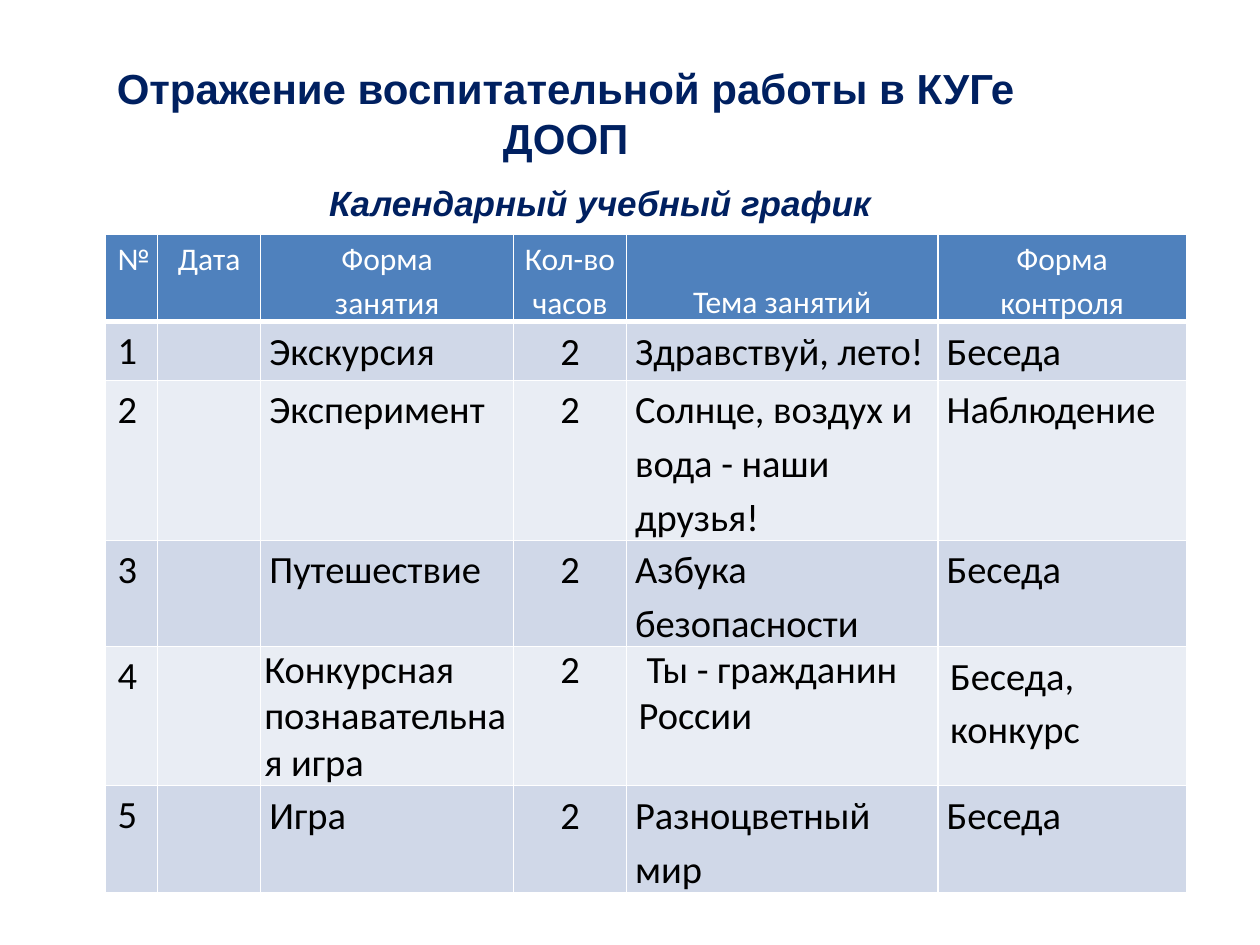
from dataclasses import dataclass, replace
from typing import Any

from lxml.etree import SubElement
from pptx import Presentation
from pptx.dml.color import RGBColor
from pptx.enum.text import MSO_ANCHOR, MSO_AUTO_SIZE, PP_ALIGN
from pptx.oxml.ns import qn
from pptx.util import Pt

NAVY = RGBColor(0x00, 0x20, 0x60)
BLUE = RGBColor(0x4F, 0x81, 0xBD)
BAND_DARK = RGBColor(0xD0, 0xD8, 0xE8)
BAND_LIGHT = RGBColor(0xE9, 0xED, 0xF4)
WHITE = RGBColor(0xFF, 0xFF, 0xFF)
BLACK = RGBColor(0x00, 0x00, 0x00)

HEADING_FONT = {"name": "Arial", "size": Pt(24), "bold": True}
SUBHEADING_FONT = {**HEADING_FONT, "size": Pt(20), "italic": True}
HEADER_FONT = {"name": "Calibri", "size": Pt(18), "bold": False}
BODY_FONT = {**HEADER_FONT, "size": Pt(22)}

COLUMN_WIDTHS = (30, 59, 144.5, 64.5, 178, 142)
ROW_HEIGHTS = (49.5, 33, 91.5, 60.5, 79.5, 61)


@dataclass(frozen=True)
class CellStyle:
    side: float = 5
    top: float = 0
    align: PP_ALIGN = PP_ALIGN.LEFT
    spacing: float = 1.15
    anchor: MSO_ANCHOR = MSO_ANCHOR.TOP
    left: float = 0
    first_line: float = 0


PLAIN = CellStyle()
CENTERED = CellStyle(align=PP_ALIGN.CENTER)
NUMBER = CellStyle(side=7.2, top=3.6, spacing=1)
DATE = replace(NUMBER, align=PP_ALIGN.CENTER)
BOTTOM = replace(CENTERED, anchor=MSO_ANCHOR.BOTTOM)
TIGHT = CellStyle(side=0, spacing=1)

HEADER_STYLES = (NUMBER, DATE, CENTERED, CENTERED, BOTTOM, CENTERED)
LESSON_STYLES = (NUMBER, DATE, PLAIN, CENTERED, PLAIN, PLAIN)
CONTEST_STYLES = (
    NUMBER,
    DATE,
    replace(TIGHT, left=2),
    replace(TIGHT, align=PP_ALIGN.CENTER),
    replace(TIGHT, left=7, first_line=4.5),
    replace(TIGHT, left=7, spacing=1.15, align=PP_ALIGN.JUSTIFY),
)

HEADERS = ("№", "Дата", "Форма\nзанятия", "Кол-во\nчасов", "Тема занятий", "Форма\nконтроля")
LESSONS = (
    ("Экскурсия", "Здравствуй, лето!", "Беседа"),
    ("Эксперимент", "Солнце, воздух и вода - наши друзья!", "Наблюдение"),
    ("Путешествие", "Азбука безопасности", "Беседа"),
    ("Конкурсная познавательная игра", "Ты - гражданин России", "Беседа, конкурс"),
    ("Игра", "Разноцветный мир", "Беседа"),
)
CONTEST_NUMBER = 4


def apply(target: Any, values: dict[str, Any]) -> None:
    for attribute, value in values.items():
        setattr(target, attribute, value)


def write(paragraph: Any, text: str, font: dict[str, Any], color: RGBColor) -> None:
    run = paragraph.add_run()
    run.text = text
    apply(run.font, font)
    run.font.color.rgb = color


def draw_heading(shape: Any, box: tuple, text: str, font: dict[str, Any],
                 auto_size: MSO_AUTO_SIZE) -> None:
    apply(shape, dict(zip(("left", "top", "width", "height"), map(Pt, box))))
    apply(shape.text_frame, {"word_wrap": True, "auto_size": auto_size,
                             "vertical_anchor": MSO_ANCHOR.TOP})
    paragraph = shape.text_frame.paragraphs[0]
    paragraph.alignment = PP_ALIGN.CENTER
    write(paragraph, text, font, NAVY)


def draw_borders(cell: Any, bottom: float) -> None:
    properties = cell._tc.get_or_add_tcPr()
    for edge, width in (("L", 1), ("R", 1), ("T", 1), ("B", bottom)):
        line = SubElement(properties, qn(f"a:ln{edge}"), w=str(Pt(width)))
        fill = SubElement(line, qn("a:solidFill"))
        SubElement(fill, qn("a:srgbClr"), val=str(WHITE))


def draw_cell(cell: Any, text: str, style: CellStyle, font: dict[str, Any],
              color: RGBColor, background: RGBColor, bottom: float) -> None:
    draw_borders(cell, bottom)
    cell.fill.solid()
    cell.fill.fore_color.rgb = background
    apply(cell, {"margin_left": Pt(style.side), "margin_right": Pt(style.side),
                 "margin_top": Pt(style.top), "margin_bottom": Pt(style.top),
                 "vertical_anchor": style.anchor})
    if not text:
        return
    for index, line in enumerate(text.split("\n")):
        frame = cell.text_frame
        paragraph = frame.add_paragraph() if index else frame.paragraphs[0]
        apply(paragraph, {"alignment": style.align, "line_spacing": style.spacing})
        apply_indent = paragraph._p.get_or_add_pPr().set
        apply_indent("marL", str(Pt(style.left)))
        apply_indent("indent", str(Pt(style.first_line)))
        write(paragraph, line, font, color)


def draw_schedule(slide: Any) -> None:
    schedule = slide.shapes.add_table(
        len(ROW_HEIGHTS), len(COLUMN_WIDTHS), Pt(60), Pt(134),
        Pt(sum(COLUMN_WIDTHS)), Pt(sum(ROW_HEIGHTS))).table
    apply(schedule, {"first_row": False, "horz_banding": False})
    for column, width in zip(schedule.columns, COLUMN_WIDTHS):
        column.width = Pt(width)
    for row, height in zip(schedule.rows, ROW_HEIGHTS):
        row.height = Pt(height)
    for column, (text, style) in enumerate(zip(HEADERS, HEADER_STYLES)):
        draw_cell(schedule.cell(0, column), text, style, HEADER_FONT, WHITE, BLUE, 3)
    for number, (activity, topic, control) in enumerate(LESSONS, 1):
        styles = CONTEST_STYLES if number == CONTEST_NUMBER else LESSON_STYLES
        background = BAND_DARK if number % 2 else BAND_LIGHT
        texts = (str(number), "", activity, "2", topic, control)
        for column, (text, style) in enumerate(zip(texts, styles)):
            draw_cell(schedule.cell(number, column), text, style,
                      BODY_FONT, BLACK, background, 1)


def main() -> None:
    presentation = Presentation()
    apply(presentation, {"slide_width": Pt(720), "slide_height": Pt(540)})
    slide = presentation.slides.add_slide(presentation.slide_layouts[5])
    draw_heading(slide.shapes.title, (54, 32, 538.5, 38),
                 "Отражение воспитательной работы в КУГе ДООП",
                 HEADING_FONT, MSO_AUTO_SIZE.NONE)
    subheading = slide.shapes.add_textbox(Pt(0), Pt(0), Pt(0), Pt(0))
    draw_heading(subheading, (122, 100, 442, 32), "Календарный учебный график",
                 SUBHEADING_FONT, MSO_AUTO_SIZE.SHAPE_TO_FIT_TEXT)
    draw_schedule(slide)
    presentation.save("out.pptx")


if __name__ == "__main__":
    main()
